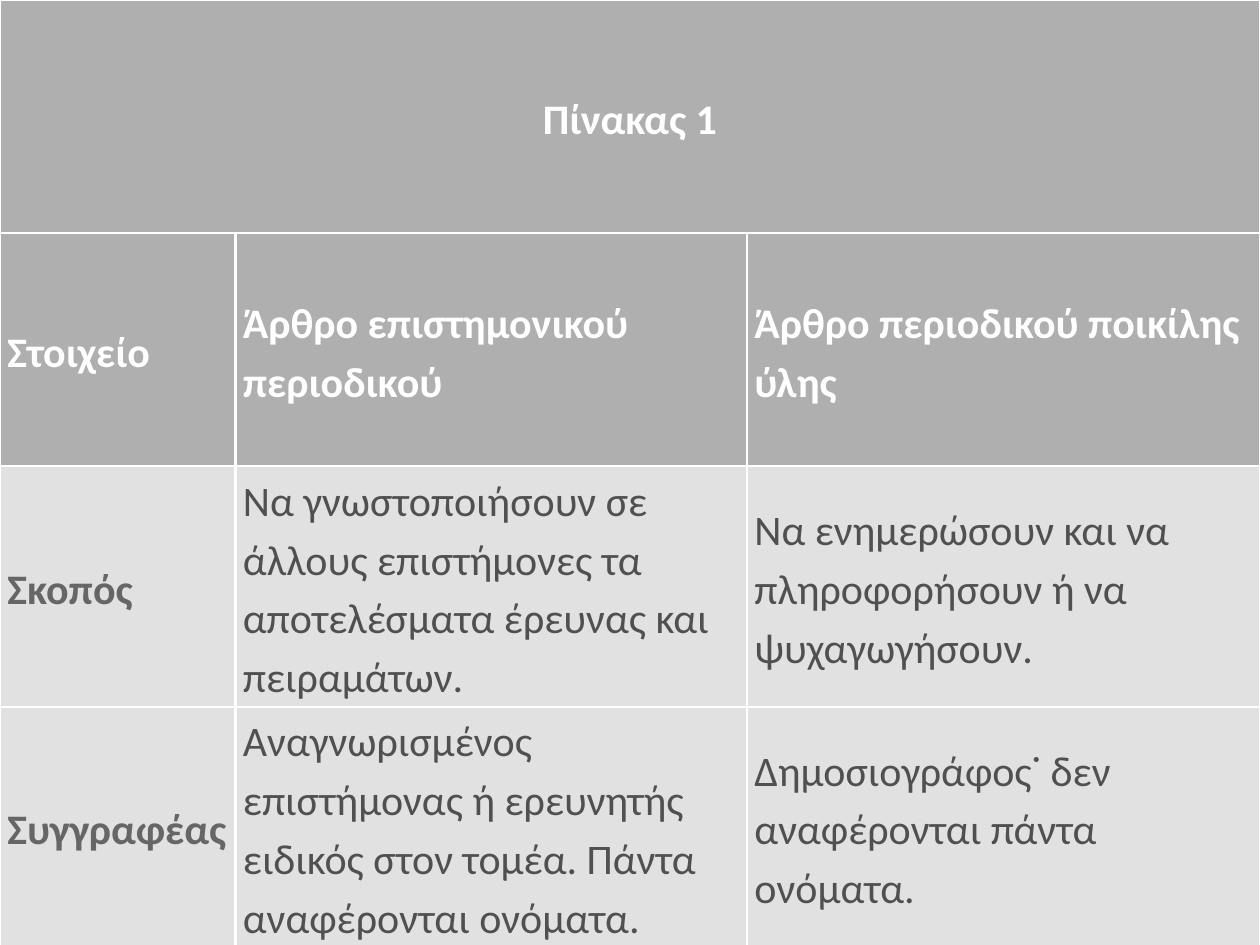
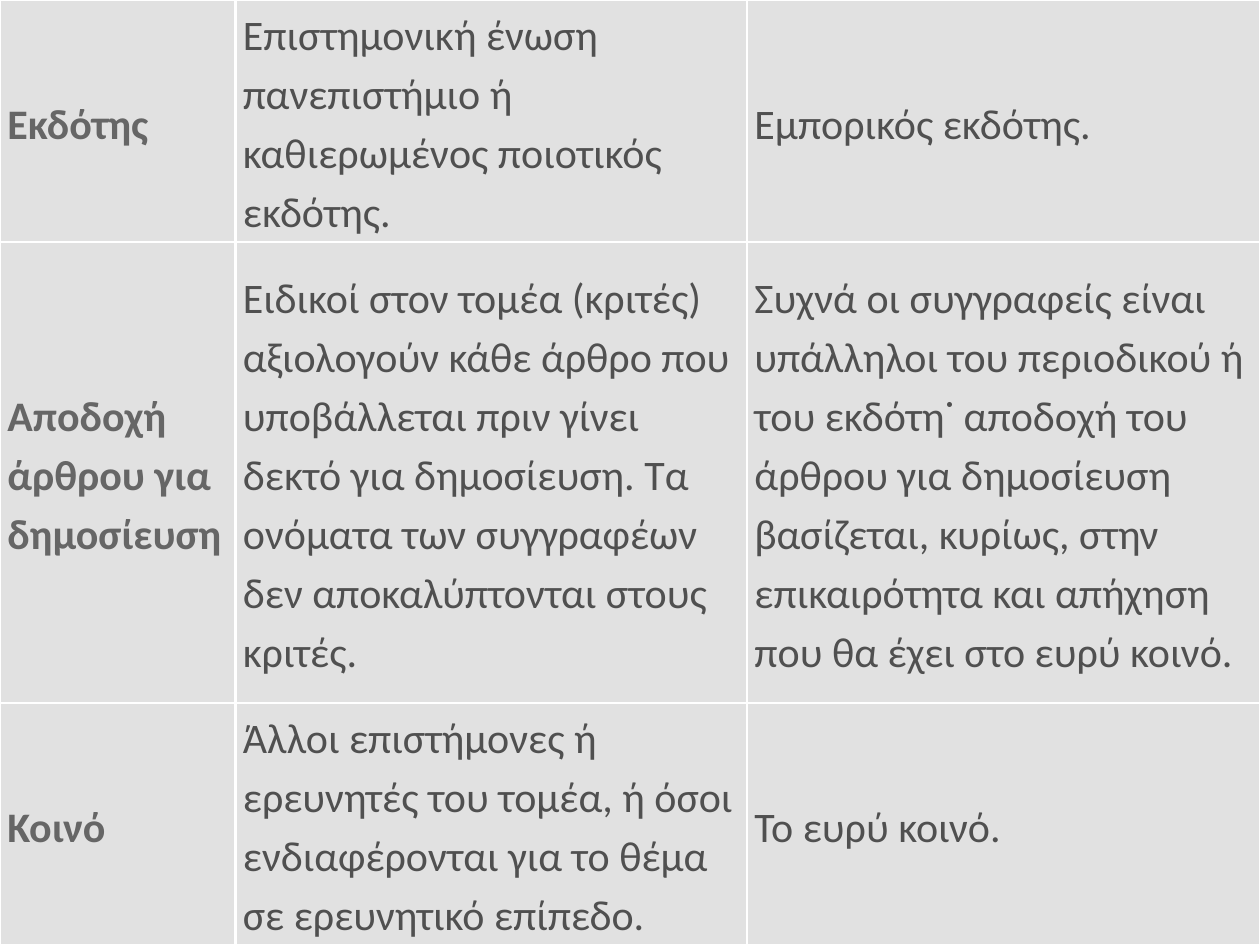
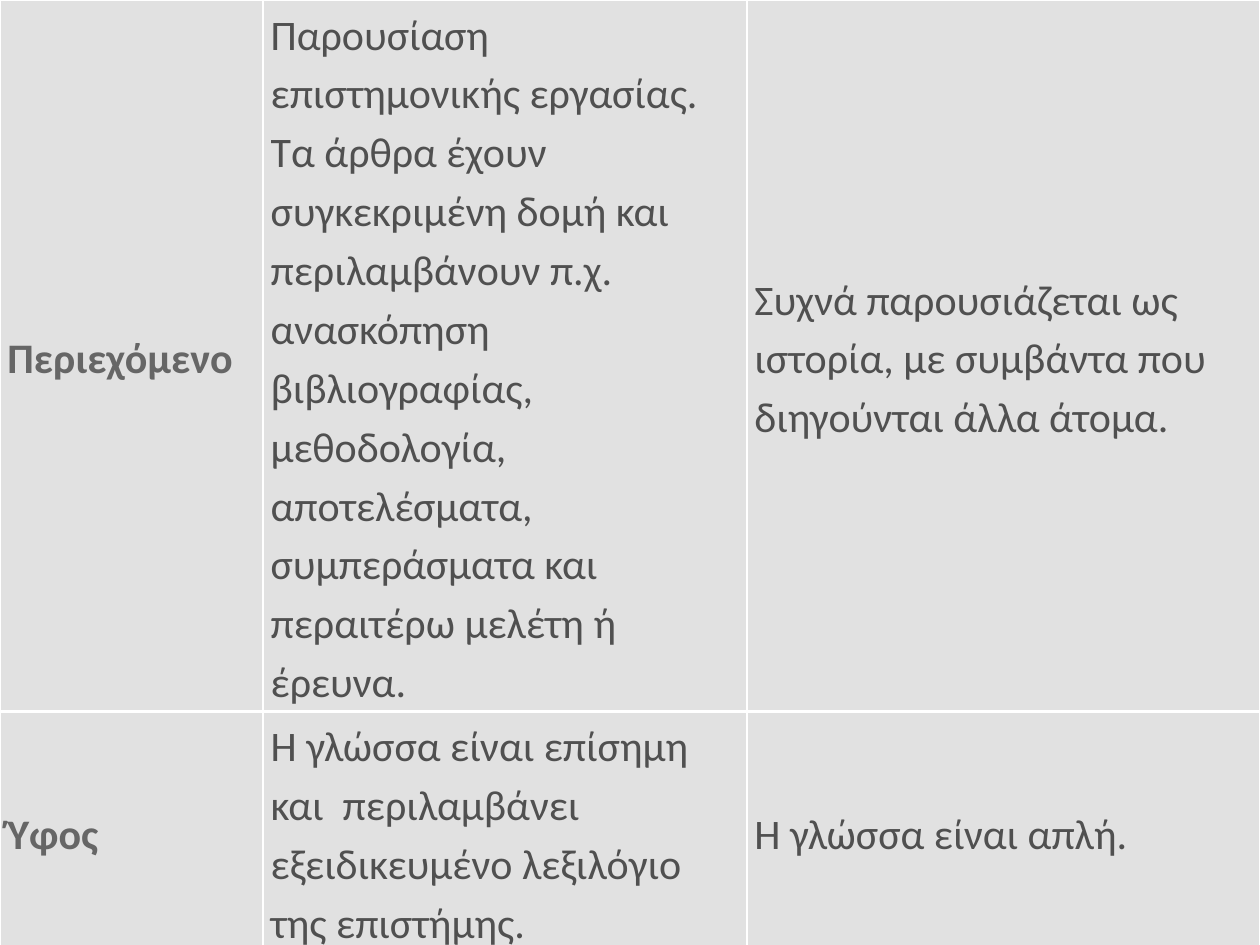
from dataclasses import dataclass

import pptx
import pptx.dml.color
import pptx.enum.text
import pptx.oxml
import pptx.oxml.ns
import pptx.presentation
import pptx.table
import pptx.util

Pt = pptx.util.Pt
Rgb = pptx.dml.color.RGBColor
Align = pptx.enum.text.PP_ALIGN
Anchor = pptx.enum.text.MSO_ANCHOR


@dataclass(frozen=True)
class Theme:
    font: str = "Calibri"
    size: float = 24
    lead: float = 1.15
    side: float = 4.2
    edge: float = 1.44
    line: float = 1.5
    rule: str = "FFFFFF"
    white: str = "FFFFFF"
    label: str = "666666"
    body: str = "505050"
    dark: str = "AFAFAF"
    light: str = "E1E1E1"


@dataclass(frozen=True)
class Row:
    height: float
    texts: tuple[str, ...]
    head: bool = False


@dataclass(frozen=True)
class Grid:
    cols: tuple[float, ...]
    rows: tuple[Row, ...]


THEME = Theme()
WIDTH, HEIGHT = 720, 540
COLS = (134.64, 292.32, 293.04)
WIDE = (150.48, 276.48, 293.04)

GRIDS = (
    Grid(COLS, (
        Row(133.2, ("Πίνακας 1",), True),
        Row(133.2, (
            "Στοιχείο",
            "Άρθρο επιστημονικού περιοδικού",
            "Άρθρο περιοδικού ποικίλης ύλης",
        ), True),
        Row(136.8, (
            "Σκοπός",
            "Να γνωστοποιήσουν σε άλλους επιστήμονες τα αποτελέσματα "
            "έρευνας και πειραμάτων.",
            "Να ενημερώσουν και να πληροφορήσουν ή να ψυχαγωγήσουν.",
        )),
        Row(136.8, (
            "Συγγραφέας",
            "Αναγνωρισμένος επιστήμονας ή ερευνητής ειδικός στον τομέα. "
            "Πάντα αναφέρονται ονόματα.",
            "Δημοσιογράφος˙ δεν αναφέρονται πάντα ονόματα.",
        )),
    )),
    Grid(COLS, (
        Row(138.24, (
            "Εκδότης",
            "Επιστημονική ένωση πανεπιστήμιο ή καθιερωμένος ποιοτικός εκδότης.",
            "Εμπορικός εκδότης.",
        )),
        Row(263.52, (
            "Αποδοχή άρθρου για δημοσίευση",
            "Ειδικοί στον τομέα (κριτές) αξιολογούν κάθε άρθρο που υποβάλλεται "
            "πριν γίνει δεκτό για δημοσίευση. Τα ονόματα των συγγραφέων δεν "
            "αποκαλύπτονται στους κριτές.",
            "Συχνά οι συγγραφείς είναι υπάλληλοι του περιοδικού ή του εκδότη˙ "
            "αποδοχή του άρθρου για δημοσίευση βασίζεται, κυρίως, στην "
            "επικαιρότητα και απήχηση που θα έχει στο ευρύ κοινό.",
        )),
        Row(138.24, (
            "Κοινό",
            "Άλλοι επιστήμονες ή ερευνητές του τομέα, ή όσοι ενδιαφέρονται "
            "για το θέμα σε ερευνητικό επίπεδο.",
            "Το ευρύ κοινό.",
        )),
    )),
    Grid(WIDE, (
        Row(404.64, (
            "Περιεχόμενο",
            "Παρουσίαση επιστημονικής εργασίας. Τα άρθρα έχουν συγκεκριμένη "
            "δομή και περιλαμβάνουν π.χ. ανασκόπηση βιβλιογραφίας, "
            "μεθοδολογία, αποτελέσματα, συμπεράσματα και περαιτέρω μελέτη ή "
            "έρευνα.",
            "Συχνά παρουσιάζεται ως ιστορία, με συμβάντα που διηγούνται άλλα "
            "άτομα.",
        )),
        Row(135.36, (
            "Ύφος",
            "Η γλώσσα είναι επίσημη και  περιλαμβάνει εξειδικευμένο λεξιλόγιο "
            "της επιστήμης.",
            "Η γλώσσα είναι απλή.",
        )),
    )),
)


def apply(target: object, values: dict[str, object]) -> None:
    for name, value in values.items():
        setattr(target, name, value)


def add_rules(cell: pptx.table._Cell) -> None:
    props = cell._tc.get_or_add_tcPr()
    for spot, side in enumerate("LRTB"):
        props.insert(spot, pptx.oxml.parse_xml(
            f'<a:ln{side} {pptx.oxml.ns.nsdecls("a")} w="{Pt(THEME.line)}">'
            f'<a:solidFill><a:srgbClr val="{THEME.rule}"/></a:solidFill>'
            f'</a:ln{side}>'
        ))


def style_cell(cell: pptx.table._Cell, head: bool, first: bool) -> None:
    edge = Pt(0 if head else THEME.edge)
    apply(cell, {
        "margin_left": Pt(THEME.side),
        "margin_right": Pt(THEME.side),
        "margin_top": edge,
        "margin_bottom": edge,
        "vertical_anchor": Anchor.MIDDLE,
    })
    cell.fill.solid()
    cell.fill.fore_color.rgb = Rgb.from_string(THEME.dark if head else THEME.light)
    add_rules(cell)


def write_cell(cell: pptx.table._Cell, text: str, head: bool, first: bool,
               align: Align) -> None:
    para = cell.text_frame.paragraphs[0]
    apply(para, {"alignment": align, "line_spacing": THEME.lead})
    run = para.add_run()
    run.text = text
    apply(run.font, {
        "name": THEME.font,
        "size": Pt(THEME.size),
        "bold": head or first,
    })
    tone = THEME.white if head else THEME.label if first else THEME.body
    run.font.color.rgb = Rgb.from_string(tone)


def fill_row(table: pptx.table.Table, index: int, row: Row) -> None:
    cells = list(table.rows[index].cells)
    table.rows[index].height = Pt(row.height)
    for col, cell in enumerate(cells):
        style_cell(cell, row.head, col == 0)
    whole = len(row.texts) == 1
    if whole:
        cells[0].merge(cells[-1])
    align = Align.CENTER if whole else Align.LEFT
    for col, (cell, text) in enumerate(zip(cells, row.texts)):
        write_cell(cell, text, row.head, col == 0, align)


def add_grid(deck: pptx.presentation.Presentation, grid: Grid) -> None:
    slide = deck.slides.add_slide(deck.slide_layouts.get_by_name("Blank"))
    table = slide.shapes.add_table(
        len(grid.rows), len(grid.cols), Pt(0), Pt(0), Pt(WIDTH), Pt(HEIGHT)
    ).table
    apply(table, {"first_row": False, "horz_banding": False})
    for col, width in zip(table.columns, grid.cols):
        col.width = Pt(width)
    for index, row in enumerate(grid.rows):
        fill_row(table, index, row)


def main() -> None:
    deck = pptx.Presentation()
    apply(deck, {"slide_width": Pt(WIDTH), "slide_height": Pt(HEIGHT)})
    for grid in GRIDS:
        add_grid(deck, grid)
    deck.save("out.pptx")


if __name__ == "__main__":
    main()
